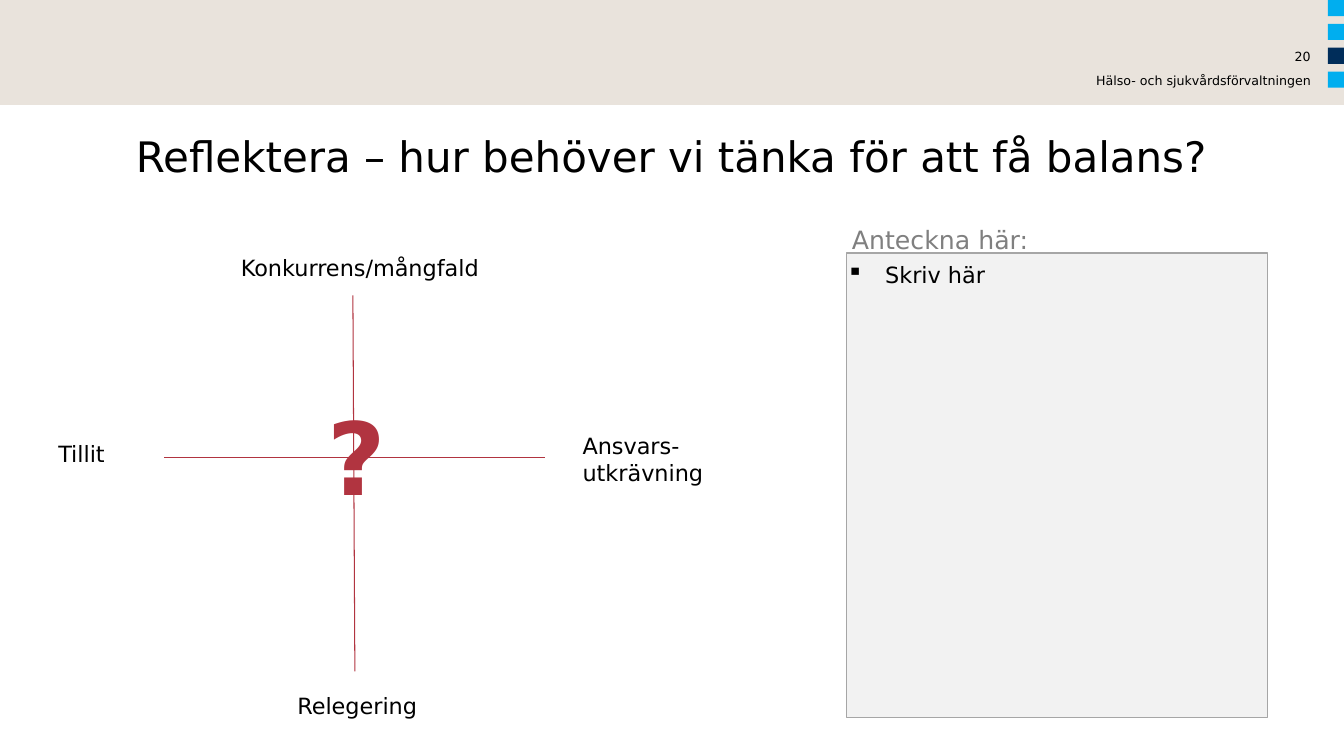
import pptx
import pptx.dml.color
import pptx.enum.shapes
import pptx.enum.text
import pptx.oxml.ns
import pptx.util
from lxml import etree
from pptx.util import Inches

FONT = "DejaVu Sans"
RED = "B13440"
LEFT, CENTER, RIGHT = (
    pptx.enum.text.PP_ALIGN.LEFT,
    pptx.enum.text.PP_ALIGN.CENTER,
    pptx.enum.text.PP_ALIGN.RIGHT,
)


def color(hex_text):
    return pptx.dml.color.RGBColor.from_string(hex_text)


def add_child(parent, tag, **attributes):
    return etree.SubElement(parent, pptx.oxml.ns.qn(tag), **attributes)


def write(shape, text, size=16, fill="000000", bold=False, align=LEFT,
          inset=(0, 0), bullet=None, spacing=None):
    frame = shape.text_frame
    frame.word_wrap = True
    frame.vertical_anchor = pptx.enum.text.MSO_ANCHOR.TOP
    frame.margin_left = frame.margin_right = Inches(inset[0])
    frame.margin_top = frame.margin_bottom = Inches(inset[1])
    para = frame.paragraphs[0]
    para.alignment = align
    if spacing:
        para.line_spacing = spacing
    if bullet:
        properties = para._p.get_or_add_pPr()
        properties.set("marL", str(Inches(0.38)))
        properties.set("indent", str(-Inches(0.38)))
        add_child(properties, "a:buChar", char=bullet)
    for number, line in enumerate(text.split("\n")):
        if number:
            para.add_line_break()
        span = para.add_run()
        span.text = line
        span.font.name = FONT
        span.font.size = pptx.util.Pt(size)
        span.font.bold = bold
        span.font.color.rgb = color(fill)


def add_text(page, box, text, **style):
    write(page.shapes.add_textbox(*map(Inches, box)), text, **style)


def add_rectangle(page, box, fill, outline=None):
    shape = page.shapes.add_shape(
        pptx.enum.shapes.MSO_SHAPE.RECTANGLE, *map(Inches, box))
    shape.shadow.inherit = False
    shape.fill.solid()
    shape.fill.fore_color.rgb = color(fill)
    if outline:
        shape.line.color.rgb = color(outline)
        shape.line.width = pptx.util.Pt(0.75)
    else:
        shape.line.fill.background()
    return shape


def add_line(page, start, end, width):
    line = page.shapes.add_connector(
        pptx.enum.shapes.MSO_CONNECTOR.STRAIGHT, *map(Inches, start + end))
    line.line.color.rgb = color(RED)
    line.line.width = pptx.util.Pt(width)
    add_child(line._element.spPr, "a:effectLst")


def add_header(page, box):
    left, top, width, height = box
    add_rectangle(page, box, "E9E3DC")
    # Squares along the right edge
    side = 0.16
    for row, fill in enumerate(["00AEEF", "00AEEF", "002D5A", "00AEEF"]):
        square = (left + width - side, top + row * 0.237, side, side)
        add_rectangle(page, square, fill)
    # Department and page number
    for offset, text in [(0.72, "Hälso- och sjukvårdsförvaltningen"), (0.49, "20")]:
        add_text(page, (left + width - 4, top + offset, 3.67, 0.14), text,
                 size=9, align=RIGHT)


def add_balance_cross(page, box):
    left, top, width, height = box
    # Axes
    add_line(page, (left + 3.02, top + 0.46), (left + 3.04, top + 4.19), 0.75)
    add_line(page, (left + 1.15, top + 2.07), (left + 4.93, top + 2.07), 0.5)
    # Names of the four poles
    poles = [
        ("Relegering", 2.37, 4.35, 2.51),
        ("Konkurrens/mångfald", 1.81, 0, 2.88),
        ("Ansvars-\nutkrävning", width - 1.6, 1.77, 1.6),
        ("Tillit", 0, 1.85, 0.93),
    ]
    for text, x, y, pole_width in poles:
        add_text(page, (left + x, top + y, pole_width, 0.61), text, inset=(0.1, 0.05))
    # Question in the middle
    add_text(page, (left + 2.67, top + 1.4, 0.58, 1.1), "?",
             size=72, fill=RED, bold=True, inset=(0.1, 0.05))


def add_notes_area(page, box):
    left, top, width, height = box
    area = add_rectangle(page, box, "F2F2F2", outline="A6A6A6")
    write(area, "Skriv här", bullet="▪", spacing=1.3)
    add_text(page, (left + 0.05, top - 0.28, 2.74, 0.91), "Anteckna här:",
             size=18, fill="808080")


def main():
    deck = pptx.Presentation()
    deck.slide_width, deck.slide_height = Inches(13.33), Inches(7.5)
    page = deck.slides.add_slide(deck.slide_layouts[6])
    add_header(page, (0, 0, 13.33, 1.04))
    add_text(page, (0.05, 1.29, 13.23, 0.91),
             "Reflektera – hur behöver vi tänka för att få balans?",
             size=30, align=CENTER)
    add_balance_cross(page, (0.48, 2.47, 6.8, 4.96))
    add_notes_area(page, (8.4, 2.51, 4.17, 4.61))
    deck.save("out.pptx")


if __name__ == "__main__":
    main()
